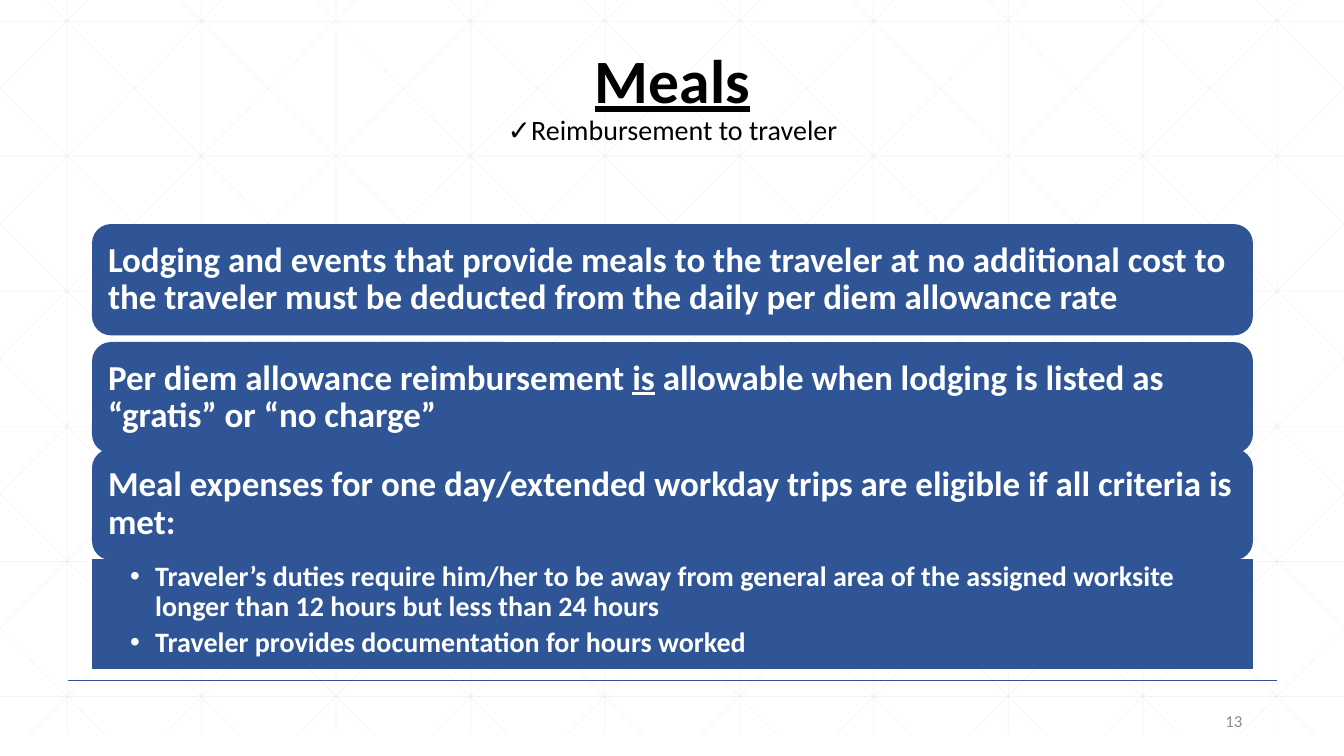
"""Build the slide on meal reimbursement rules."""
from lxml.etree import SubElement
from pptx import Presentation
from pptx.dml.color import RGBColor
from pptx.enum.shapes import MSO_CONNECTOR, MSO_SHAPE
from pptx.enum.text import MSO_ANCHOR, PP_ALIGN
from pptx.oxml.ns import qn
from pptx.util import Inches, Pt

BLUE, WHITE, BLACK = "2F5597", "FFFFFF", "000000"
WIDE, TOP, LOW, STEP = 13.33, -0.21, 7.29, 4 / 3

deck = Presentation()
deck.slide_width, deck.slide_height = Inches(WIDE), Inches(7.5)
slide = deck.slides.add_slide(deck.slide_layouts[6])


def draw_line(x1, y1, x2, y2, color, width, alpha=None):
    line = slide.shapes.add_connector(
        MSO_CONNECTOR.STRAIGHT, Inches(x1), Inches(y1), Inches(x2), Inches(y2))
    line.line.color.rgb = RGBColor.from_string(color)
    line.line.width = Pt(width)
    props = line._element.spPr
    if alpha:
        tint = props.find(".//" + qn("a:srgbClr"))
        SubElement(tint, qn("a:alpha")).set("val", str(alpha * 1000))
    SubElement(props, qn("a:effectLst"))


def add_text(box, x, y, w, h, paras, shape=None, fill=None, edge=1, color=WHITE,
             align=PP_ALIGN.LEFT, anchor=MSO_ANCHOR.MIDDLE, pads=(0.1,) * 4,
             space=0, after=0, bullet=False):
    area = [Inches(v) for v in (x, y, w, h)]
    if shape is None:
        box = slide.shapes.add_textbox(*area)
    else:
        box = slide.shapes.add_shape(shape, *area)
        box.shadow.inherit = False
        box.fill.solid()
        box.fill.fore_color.rgb = RGBColor.from_string(fill)
        box.line.color.rgb = RGBColor.from_string(fill)
        box.line.width = Pt(edge)
    frame = box.text_frame
    frame.word_wrap = True
    frame.vertical_anchor = anchor
    (frame.margin_left, frame.margin_top,
     frame.margin_right, frame.margin_bottom) = [Inches(p) for p in pads]
    for i, runs in enumerate(paras):
        para = frame.add_paragraph() if i else frame.paragraphs[0]
        para.alignment = align
        para.line_spacing = space or 1.0
        para.space_after = Pt(after)
        if bullet:
            props = para._p.get_or_add_pPr()
            props.set("marL", str(Inches(0.25)))
            props.set("indent", str(Inches(-0.25)))
            SubElement(props, qn("a:buFont")).set("typeface", "Arial")
            SubElement(props, qn("a:buChar")).set("char", "•")
        for words, size, bold, under in runs:
            run = para.add_run()
            run.text = words
            font = run.font
            font.name, font.size = "Calibri", Pt(size)
            font.bold, font.underline = bold, under
            font.color.rgb = RGBColor.from_string(color)


grid = [((i + 0.5) * STEP, TOP, (i + 0.5) * STEP, LOW) for i in range(10)]
grid += [(0, 0.21 + 1.34 * i, WIDE, 0.21 + 1.34 * i) for i in range(6)]
for i in range(-5, 10):
    start = 0.25 + STEP * i
    left, right = max(0, start), min(WIDE, start + 7.46)
    y1, y2 = [TOP + (x - start) * 7.5 / 7.46 for x in (left, right)]
    grid += [(left, y1, right, y2), (WIDE - left, y1, WIDE - right, y2)]
for ends in grid:
    draw_line(*ends, "D9D9D9", 0.5, alpha=25)
draw_line(0.67, 6.75, 12.67, 6.75, BLUE, 1)

title = [[("Meals", 44, True, True)],
         [("✓Reimbursement to traveler", 20, False, False)]]
add_text(None, 0.92, 0.4, 11.5, 1.45, title, color=BLACK, align=PP_ALIGN.CENTER,
         pads=(0.1, 0.05, 0.1, 0.35), space=0.9)

rules = [
    (2.23, [("Lodging and events that provide meals to the traveler at no additional "
             "cost to the traveler must be deducted from the daily per diem "
             "allowance rate", False)]),
    (3.4, [("Per diem allowance reimbursement ", False), ("is", True),
           (" allowable when lodging is listed as “gratis” or “no charge”", False)]),
    (4.46, [("Meal expenses for one day/extended workday trips are eligible if all "
             "criteria is met:", False)]),
]
for y, parts in rules:
    runs = [(words, 25, True, under) for words, under in parts]
    add_text(None, 0.92, y, 11.5, 1.09, [runs], shape=MSO_SHAPE.ROUNDED_RECTANGLE,
             fill=BLUE, space=0.9)

tests = ["Traveler’s duties require him/her to be away from general area of the "
         "assigned worksite longer than 12 hours but less than 24 hours",
         "Traveler provides documentation for hours worked"]
add_text(None, 0.92, 5.55, 11.5, 1.08, [[(t, 20, True, False)] for t in tests],
         shape=MSO_SHAPE.RECTANGLE, fill=BLUE, edge=0.75, anchor=MSO_ANCHOR.TOP,
         pads=(0.37, 0.03, 0.19, 0.03), space=0.9, after=4, bullet=True)

add_text(None, 9.42, 6.95, 3, 0.4, [[("13", 12, False, False)]], color="8C8C8C",
         align=PP_ALIGN.RIGHT)

deck.save("out.pptx")
